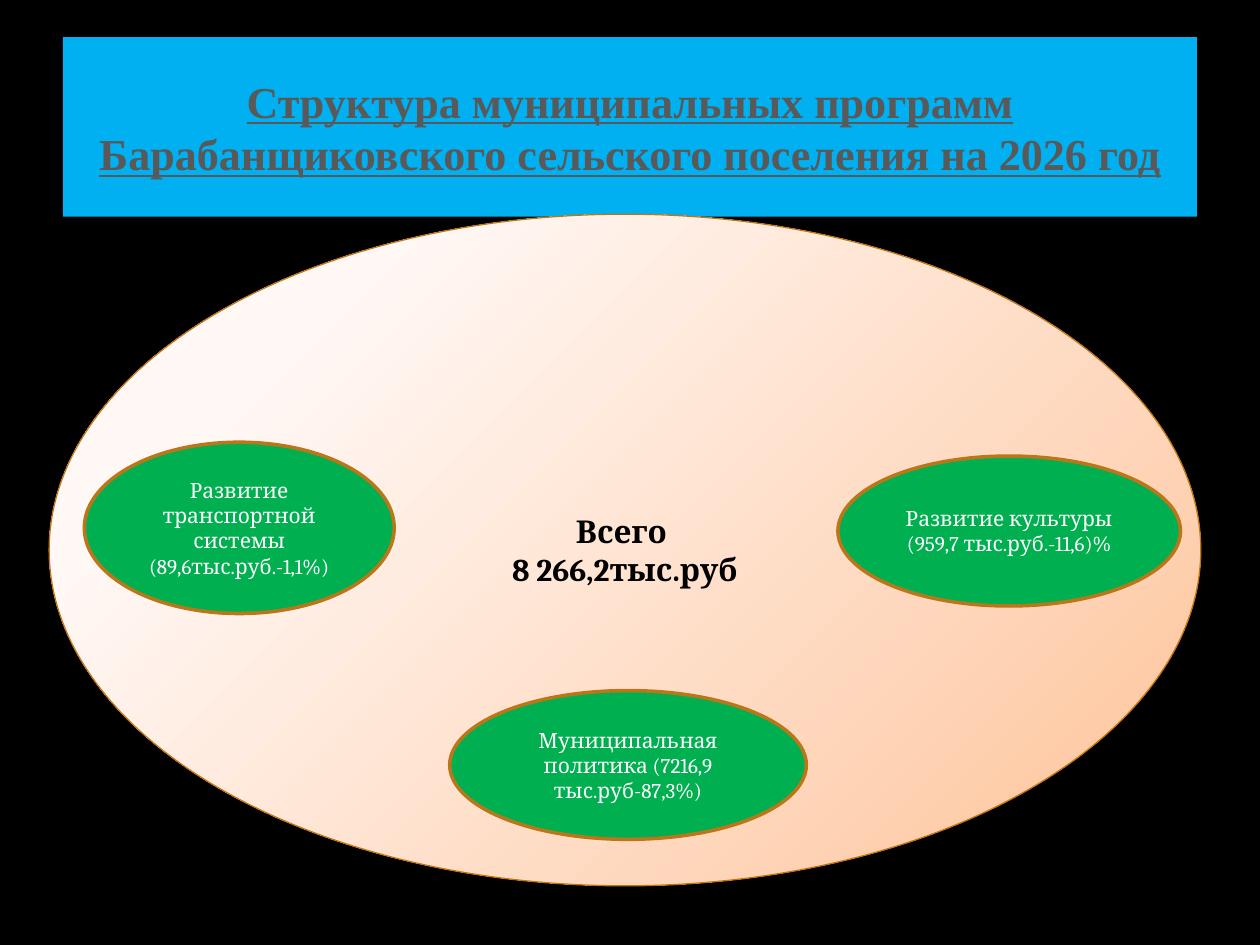
import pptx
import pptx.dml.color
import pptx.enum.shapes
import pptx.enum.text
import pptx.oxml
import pptx.oxml.ns
import pptx.util

Pt = pptx.util.Pt


def color(hex_string):
    return pptx.dml.color.RGBColor.from_string(hex_string)


def add_block(kind, box, lines, font_name, size, text_color, bold=False):
    block = slide.shapes.add_shape(kind, *[Pt(length) for length in box])
    block.shadow.inherit = False
    frame = block.text_frame
    frame.word_wrap = True
    frame.vertical_anchor = pptx.enum.text.MSO_ANCHOR.MIDDLE
    frame.text = "\n".join(lines)
    for paragraph in frame.paragraphs:
        paragraph.alignment = pptx.enum.text.PP_ALIGN.CENTER
        paragraph.font.name = font_name
        paragraph.font.size = Pt(size)
        paragraph.font.bold = bold
        paragraph.font.color.rgb = color(text_color)
    return block


RECTANGLE = pptx.enum.shapes.MSO_SHAPE.RECTANGLE
OVAL = pptx.enum.shapes.MSO_SHAPE.OVAL

presentation = pptx.Presentation()
presentation.slide_width = Pt(720)
presentation.slide_height = Pt(540)
slide = presentation.slides.add_slide(presentation.slide_layouts[6])
slide.background.fill.solid()
slide.background.fill.fore_color.rgb = color("000000")

# Title band
title = add_block(
    RECTANGLE, (36, 21.2, 648, 102.6),
    ["Структура муниципальных программ Барабанщиковского сельского поселения на 2026 год"],
    "Times New Roman", 25.2, "595959", bold=True)
title.fill.solid()
title.fill.fore_color.rgb = color("00B0F0")
title.line.fill.background()
title.text_frame.paragraphs[0].font.underline = True

# Total: large oval with a gradient spreading from the top left corner
total = add_block(OVAL, (28.1, 122.4, 658.1, 383.8), ["Всего ", "8 266,2тыс.руб"],
                  "Cambria", 18, "000000", bold=True)
total.line.color.rgb = color("C07512")
total.line.width = Pt(0.75)
gradient = pptx.oxml.parse_xml(
    f'<a:gradFill {pptx.oxml.ns.nsdecls("a")} rotWithShape="1"><a:gsLst>'
    '<a:gs pos="20000"><a:srgbClr val="FFF8F5"/></a:gs>'
    '<a:gs pos="100000"><a:srgbClr val="FEC399"/></a:gs></a:gsLst>'
    '<a:path path="circle">'
    '<a:fillToRect l="-15000" t="-15000" r="115000" b="115000"/>'
    '</a:path></a:gradFill>')
total.element.spPr.find(pptx.oxml.ns.qn("a:prstGeom")).addnext(gradient)

# Programmes
programmes = [
    ((257, 394.6, 203.8, 85), "Муниципальная политика (7216,9 тыс.руб-87,3%)"),
    ((48.2, 252.7, 177.1, 97.9), "Развитие транспортной системы (89,6тыс.руб.-1,1%)"),
    ((478.8, 260.6, 195.8, 85.7), "Развитие культуры (959,7 тыс.руб.-11,6)%"),
]
for box, label in programmes:
    programme = add_block(OVAL, box, [label], "Cambria", 12, "FFFFFF")
    programme.fill.solid()
    programme.fill.fore_color.rgb = color("00B050")
    programme.line.color.rgb = color("BB761A")
    programme.line.width = Pt(2)

presentation.save("out.pptx")
